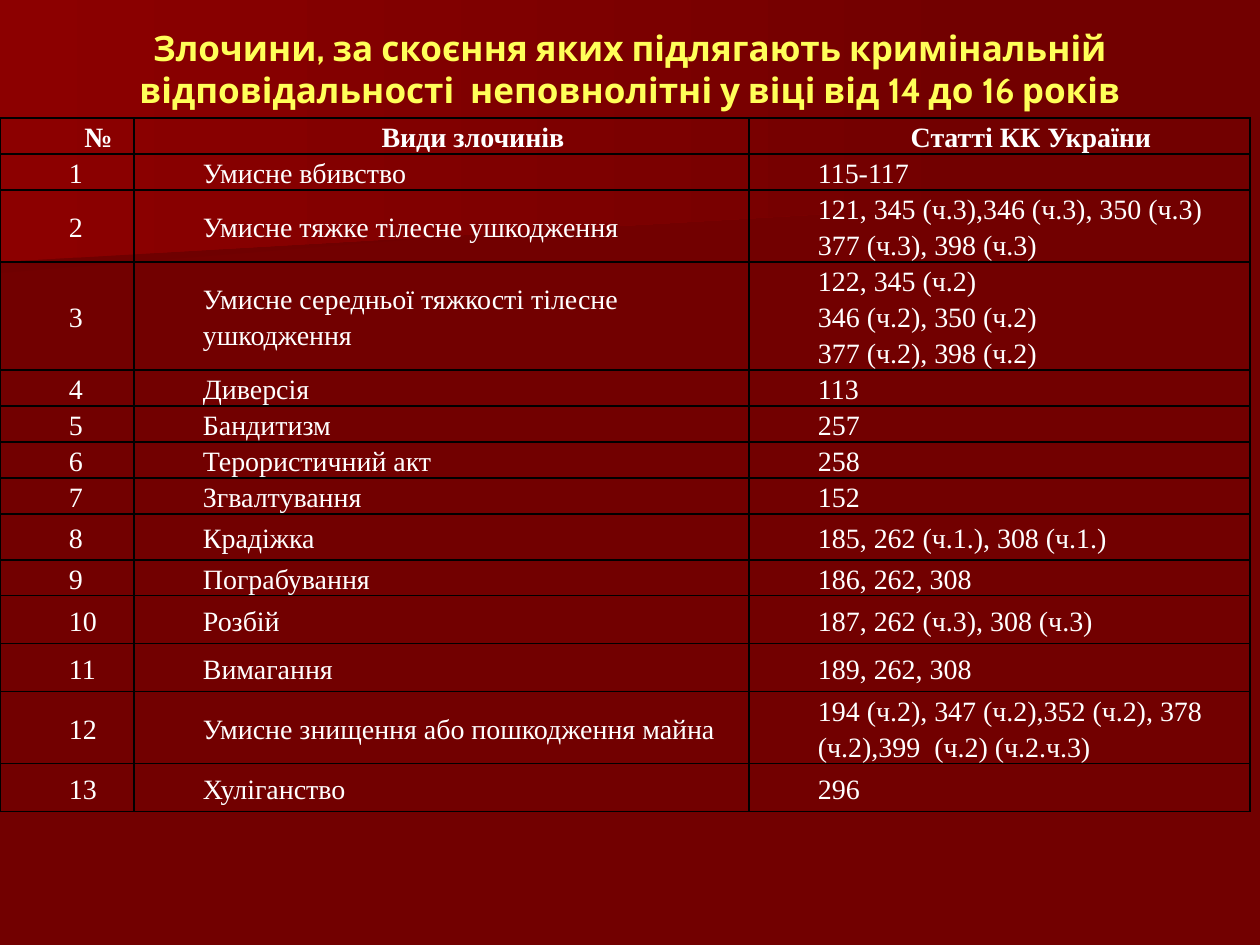
from lxml.etree import SubElement
from pptx import Presentation
from pptx.dml.color import RGBColor
from pptx.enum.text import MSO_ANCHOR, MSO_AUTO_SIZE, PP_ALIGN
from pptx.oxml import parse_xml
from pptx.oxml.ns import nsdecls, qn
from pptx.util import Emu, Pt

SCALE = 914400 / 126
TITLE = ("Злочини, за скоєння яких підлягають кримінальній "
         "відповідальності  неповнолітні у віці від 14 до 16 років")
HEAD = ("№", "Види злочинів", "Статті КК України")
CRIMES = [
    ("Умисне вбивство", "115-117", 36),
    ("Умисне тяжке тілесне ушкодження",
     "121, 345 (ч.3),346 (ч.3), 350 (ч.3)\n377 (ч.3), 398 (ч.3)", 72),
    ("Умисне середньої тяжкості тілесне ушкодження",
     "122, 345 (ч.2)\n346 (ч.2), 350 (ч.2)\n377 (ч.2), 398 (ч.2)", 108),
    ("Диверсія", "113", 36),
    ("Бандитизм", "257", 36),
    ("Терористичний акт", "258", 36),
    ("Згвалтування", "152", 36),
    ("Крадіжка", "185, 262 (ч.1.), 308 (ч.1.)", 46),
    ("Пограбування", "186, 262, 308", 36),
    ("Розбій", "187, 262 (ч.3), 308 (ч.3)", 48),
    ("Вимагання", "189, 262, 308", 48),
    ("Умисне знищення або пошкодження майна",
     "194 (ч.2), 347 (ч.2),352 (ч.2), 378 (ч.2),399  (ч.2) (ч.2.ч.3)", 72),
    ("Хуліганство", "296", 48),
]


def px(count):
    """Turn pixels into EMU."""
    return Emu(round(count * SCALE))


def tint(code):
    """Turn a hex string into a colour."""
    return RGBColor.from_string(code)


def style(para, face, size, code, bold):
    """Set the font of a paragraph."""
    font = para.font
    font.name, font.size, font.bold = face, Pt(size), bold
    font.color.rgb = tint(code)


def add_veil(slide, box, points, left, right):
    """Draw a shaded backdrop outline inside the box."""
    x, y, wide, high = box
    spots = [(x + wide * a / 100, y + high * b / 100) for a, b in points]
    pen = slide.shapes.build_freeform(*spots[0], scale=SCALE)
    pen.add_line_segments(spots[1:], close=True)
    veil = pen.convert_to_shape()
    veil.shadow.inherit = False
    veil.line.fill.background()
    veil.fill.gradient()
    veil.fill.gradient_angle = 0
    for stop, code, place in zip(veil.fill.gradient_stops, (left, right), (0, 1)):
        stop.color.rgb = tint(code)
        stop.position = place


def add_title(slide, box):
    """Place the heading in the title placeholder, in front of the backdrop."""
    title = slide.shapes.title
    title.element.getparent().append(title.element)
    title.left, title.top, title.width, title.height = map(px, box)
    frame = title.text_frame
    frame.text = TITLE
    frame.word_wrap = True
    frame.auto_size = MSO_AUTO_SIZE.NONE
    frame.vertical_anchor = MSO_ANCHOR.MIDDLE
    para = frame.paragraphs[0]
    para.alignment = PP_ALIGN.CENTER
    style(para, "Cabin", 20, "FFFF59", True)


def edge(cell, code):
    """Rule all four sides of a cell."""
    props = cell._tc.get_or_add_tcPr()
    for spot, side in enumerate("LRTB"):
        line = parse_xml(f'<a:ln{side} {nsdecls("a")} w="12700"/>')
        fill = SubElement(line, qn("a:solidFill"))
        SubElement(fill, qn("a:srgbClr"), val=code)
        props.insert(spot, line)


def fill_cell(cell, text, head):
    """Write and format one table cell."""
    cell.text = text
    cell.fill.background()
    edge(cell, "000000")
    cell.vertical_anchor = MSO_ANCHOR.MIDDLE
    cell.margin_left = cell.margin_right = px(6)
    cell.margin_top = cell.margin_bottom = 0
    for para in cell.text_frame.paragraphs:
        para.alignment = PP_ALIGN.CENTER if head else PP_ALIGN.LEFT
        para.line_spacing = 1.15
        props = para._p.get_or_add_pPr()
        props.set("marL", str(px(63)))
        props.set("indent", "0")
        style(para, "Times New Roman", 16, "FFFFFF", head)


def add_grid(slide, box, widths):
    """Place the table of crimes and articles."""
    rows = [(*HEAD, 36)]
    rows += [(str(num), *crime) for num, crime in enumerate(CRIMES, 1)]
    grid = slide.shapes.add_table(len(rows), len(widths), *map(px, box)).table
    grid.first_row = grid.horz_banding = False
    for col, wide in zip(grid.columns, widths):
        col.width = px(wide)
    for r, (*texts, high) in enumerate(rows):
        grid.rows[r].height = px(high)
        for c, text in enumerate(texts):
            fill_cell(grid.cell(r, c), text, r == 0)


def main():
    """Build and save the slide."""
    deck = Presentation()
    deck.slide_width, deck.slide_height = px(1260), px(945)
    slide = deck.slides.add_slide(deck.slide_layouts[5])
    back = slide.background.fill
    back.solid()
    back.fore_color.rgb = tint("720000")
    add_veil(slide, (0, 127, 981, 146),
             [(100, 45), (0, 100), (0, 0), (100, 0)], "6F0000", "720000")
    add_veil(slide, (0, 0, 998, 262),
             [(100, 78), (0, 100), (0, 0), (100, 0)], "8C0000", "720000")
    add_title(slide, (63, 0, 1134, 137))
    add_grid(slide, (0, 118, 1250, 694), (134, 615, 501))
    deck.save("out.pptx")


if __name__ == "__main__":
    main()
